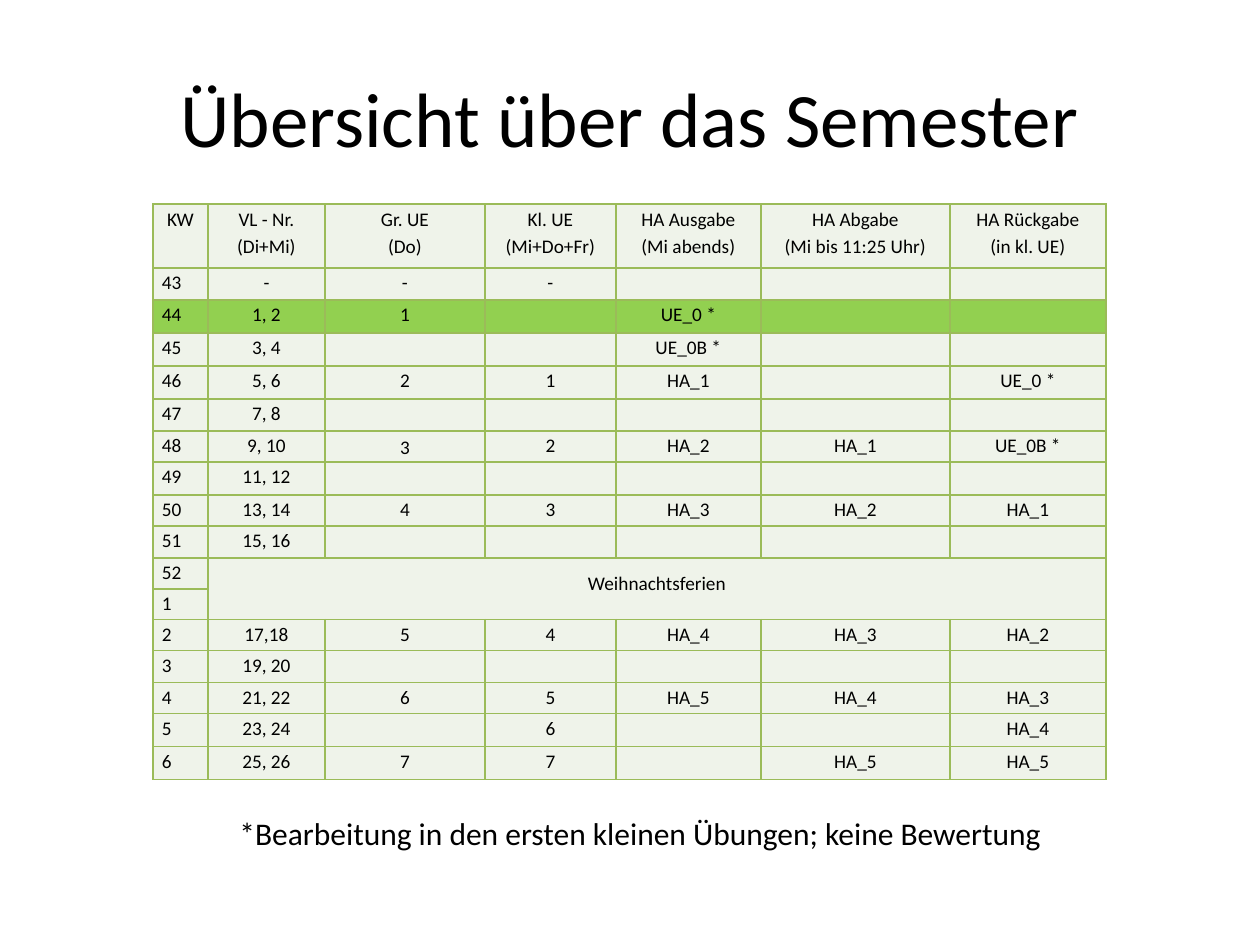
"""Build the semester overview slide with its weekly timetable."""
from typing import NamedTuple

from lxml import etree
from pptx import Presentation
from pptx.dml.color import RGBColor
from pptx.enum.text import MSO_ANCHOR, PP_ALIGN
from pptx.oxml.ns import qn
from pptx.util import Pt

LEFT, MID = PP_ALIGN.LEFT, PP_ALIGN.CENTER
TOP, CENTER = MSO_ANCHOR.TOP, MSO_ANCHOR.MIDDLE
FONT = "Calibri"
HEX = {"ink": "000000", "pale": "EFF3EA", "now": "92D050", "edge": "9BBB59"}


class Label(NamedTuple):
    text: str
    x: int
    y: int
    w: int
    h: int
    size: int
    align: PP_ALIGN


class Week(NamedTuple):
    high: int
    cells: tuple
    fill: str = "pale"


LABELS = (
    Label("Übersicht über das Semester", 63, 38, 1134, 158, 44, MID),
    Label("*Bearbeitung in den ersten kleinen Übungen; keine Bewertung",
          227, 808, 871, 50, 18, LEFT),
)
WIDTHS = (55, 117, 160, 131, 145, 189, 156)
WEEKS = (
    Week(64, ("KW", "VL - Nr.\n(Di+Mi)", "Gr. UE\n(Do)", "Kl. UE\n(Mi+Do+Fr)",
              "HA Ausgabe\n(Mi abends)", "HA Abgabe\n(Mi bis 11:25 Uhr)",
              "HA Rückgabe\n(in kl. UE)")),
    Week(32, ("43", "-", "-", "-", "", "", "")),
    Week(33, ("44", "1, 2", "1", "", "UE_0 *", "", ""), "now"),
    Week(33, ("45", "3, 4", "", "", "UE_0B *", "", "")),
    Week(33, ("46", "5, 6", "2", "1", "HA_1", "", "UE_0 *")),
    Week(32, ("47", "7, 8", "", "", "", "", "")),
    Week(31, ("48", "9, 10", "3", "2", "HA_2", "HA_1", "UE_0B *")),
    Week(33, ("49", "11, 12", "", "", "", "", "")),
    Week(31, ("50", "13, 14", "4", "3", "HA_3", "HA_2", "HA_1")),
    Week(32, ("51", "15, 16", "", "", "", "", "")),
    Week(31, ("52", "Weihnachtsferien", "", "", "", "", "")),
    Week(31, ("1", "", "", "", "", "", "")),
    Week(31, ("2", "17,18", "5", "4", "HA_4", "HA_3", "HA_2")),
    Week(32, ("3", "19, 20", "", "", "", "", "")),
    Week(31, ("4", "21, 22", "6", "5", "HA_5", "HA_4", "HA_3")),
    Week(33, ("5", "23, 24", "", "6", "", "", "HA_4")),
    Week(33, ("6", "25, 26", "7", "7", "", "HA_5", "HA_5")),
)
BREAK = 10


def px(num: int) -> int:
    return round(num * 914400 / 126)


def style(frame, size: int, align: PP_ALIGN, space: float = 1.0) -> None:
    for para in frame.paragraphs:
        para.alignment = align
        para.line_spacing = space
        for run in para.runs:
            run.font.name = FONT
            run.font.size = Pt(size)
            run.font.color.rgb = RGBColor.from_string(HEX["ink"])
        if not para.runs:
            etree.SubElement(para._p, qn("a:endParaRPr"), sz=str(size * 100))


def add_label(slide, label: Label) -> None:
    box = slide.shapes.add_textbox(*map(px, label[1:5]))
    frame = box.text_frame
    frame.word_wrap = True
    frame.vertical_anchor = CENTER
    frame.text = label.text
    style(frame, label.size, label.align)


def add_edges(cell) -> None:
    props = cell._tc.get_or_add_tcPr()
    for spot, side in enumerate(("lnL", "lnR", "lnT", "lnB")):
        line = etree.Element(qn(f"a:{side}"), w=str(Pt(1)))
        fill = etree.SubElement(line, qn("a:solidFill"))
        etree.SubElement(fill, qn("a:srgbClr"), val=HEX["edge"])
        props.insert(spot, line)


def fill_cell(cell, text: str, fill: str, align: PP_ALIGN) -> None:
    cell.margin_left = cell.margin_right = px(9)
    cell.margin_top = cell.margin_bottom = 0
    cell.vertical_anchor = TOP
    cell.fill.solid()
    cell.fill.fore_color.rgb = RGBColor.from_string(HEX[fill])
    cell.text_frame.text = text
    style(cell.text_frame, 11, align, 1.15)
    add_edges(cell)


def add_plan(slide) -> None:
    wide, high = sum(WIDTHS), sum(week.high for week in WEEKS)
    table = slide.shapes.add_table(
        len(WEEKS), len(WIDTHS), px(153), px(204), px(wide), px(high)).table
    table.first_row = table.horz_banding = False
    for col, width in zip(table.columns, WIDTHS):
        col.width = px(width)
    for row, week in enumerate(WEEKS):
        table.rows[row].height = px(week.high)
        for col, text in enumerate(week.cells):
            align = LEFT if row and not col else MID
            fill_cell(table.cell(row, col), text, week.fill, align)
    table.cell(6, 2).vertical_anchor = CENTER
    pause = table.cell(BREAK, 1)
    pause.merge(table.cell(BREAK + 1, len(WIDTHS) - 1))
    pause.margin_top = px(11)


def main() -> None:
    deck = Presentation()
    deck.slide_width, deck.slide_height = px(1260), px(945)
    slide = deck.slides.add_slide(deck.slide_layouts[6])
    for label in LABELS:
        add_label(slide, label)
    add_plan(slide)
    deck.save("out.pptx")


if __name__ == "__main__":
    main()
